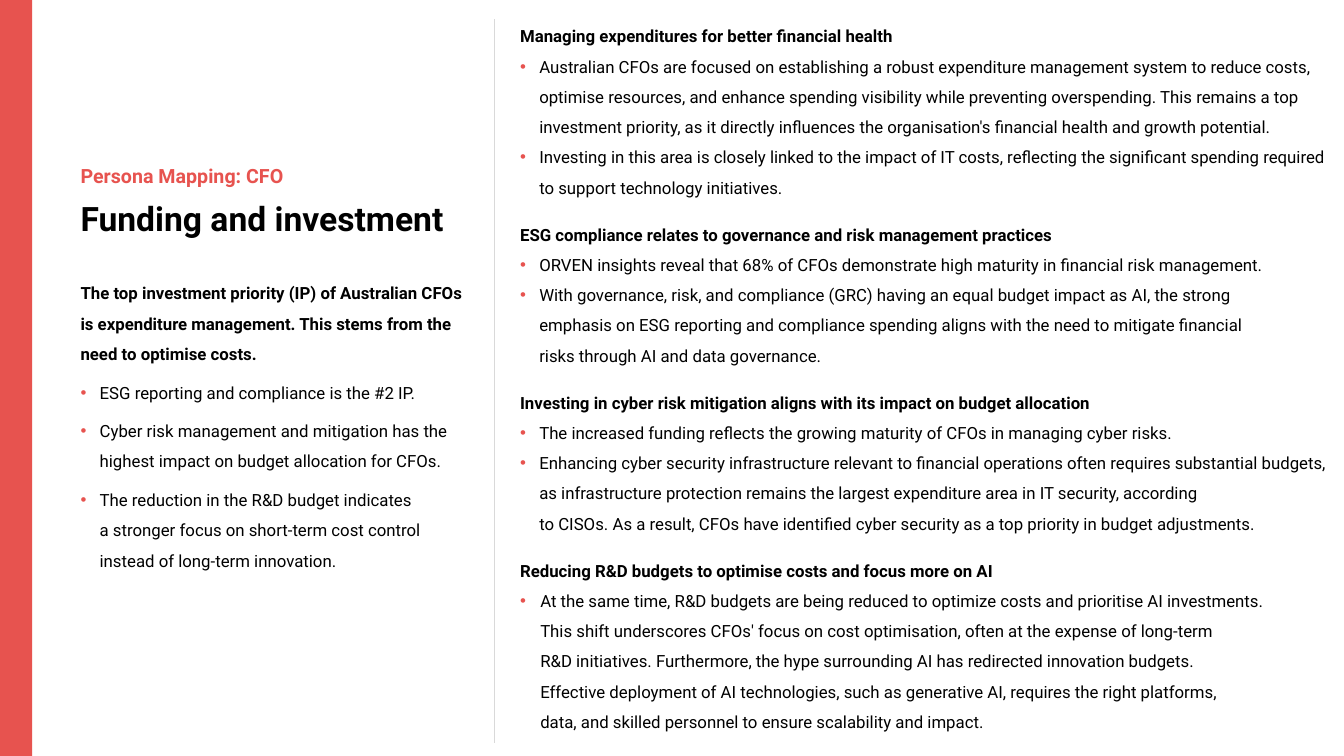
from lxml import etree
from pptx import Presentation, util as u
from pptx.dml.color import RGBColor
from pptx.enum import shapes, text
from pptx.oxml.ns import qn

RED, BLACK, GREY = "E7534F", "000000", "D9D9D9"


def px(n):
    """100 px to the inch."""
    return u.Emu(n * 9144)


def rgb(code):
    return RGBColor.from_string(code)


class Deck:
    font = "Roboto"

    def __init__(self, wide, high):
        self.prs = Presentation()
        self.prs.slide_width, self.prs.slide_height = px(wide), px(high)
        self.slide = self.prs.slides.add_slide(self.prs.slide_layouts[6])

    def bar(self, x, y, w, h, fill):
        box = self.slide.shapes.add_shape(
            shapes.MSO_SHAPE.RECTANGLE, px(x), px(y), px(w), px(h))
        box.shadow.inherit = False
        box.fill.solid()
        box.fill.fore_color.rgb = rgb(fill)
        box.line.fill.background()

    def line(self, x1, y1, x2, y2, hue, width):
        rule = self.slide.shapes.add_connector(
            shapes.MSO_CONNECTOR.STRAIGHT, px(x1), px(y1), px(x2), px(y2))
        rule.line.color.rgb = rgb(hue)
        rule.line.width = u.Pt(width)
        etree.SubElement(rule._element.spPr, qn("a:effectLst"))

    def frame(self, x, y, w, h):
        body = self.slide.shapes.add_textbox(px(x), px(y), px(w), px(h)).text_frame
        body.word_wrap = True
        body.auto_size = text.MSO_AUTO_SIZE.SHAPE_TO_FIT_TEXT
        return body

    def runs(self, para, words, size, hue, bold):
        for i, part in enumerate(words.split("\n")):
            if i:
                para.add_line_break()
            run = para.add_run()
            run.text = part
            run.font.name, run.font.size, run.font.bold = self.font, u.Pt(size), bold
            run.font.color.rgb = rgb(hue)

    def title(self, x, y, w, h, words, size, hue):
        body = self.frame(x, y, w, h)
        self.runs(body.paragraphs[0], words, size, hue, True)

    def bullet(self, para, indent):
        props = para._p.get_or_add_pPr()
        props.set("marL", str(px(indent)))
        props.set("indent", str(-px(indent)))
        tint = etree.SubElement(props, qn("a:buClr"))
        etree.SubElement(tint, qn("a:srgbClr")).set("val", RED)
        etree.SubElement(props, qn("a:buFont")).set("typeface", "Arial")
        etree.SubElement(props, qn("a:buChar")).set("char", "•")

    def topics(self, x, y, w, h, parts, gap, end):
        """Parts are (head, points, indent); gap follows a line, end a part."""
        body = self.frame(x, y, w, h)
        first = True
        for head, points, indent in parts:
            for i, words in enumerate([head] + points):
                para = body.paragraphs[0] if first else body.add_paragraph()
                first = False
                para.line_spacing = 1.5
                para.space_after = u.Pt(end if i == len(points) else gap)
                if i:
                    self.bullet(para, indent)
                self.runs(para, words, 12, BLACK, i == 0)


SUMMARY = [
    ("The top investment priority (IP) of Australian CFOs is expenditure management. "
     "This stems from the need to optimise costs.", [
         "ESG reporting and compliance is the #2 IP.",
         "Cyber risk management and mitigation has the highest impact on budget "
         "allocation for CFOs.",
         "The reduction in the R&D budget indicates\na stronger focus on short-term "
         "cost control instead of long-term innovation."], 19),
]

DETAIL = [
    ("Managing expenditures for better financial health", [
        "Australian CFOs are focused on establishing a robust expenditure management "
        "system to reduce costs, optimise resources, and enhance spending visibility "
        "while preventing overspending. This remains a top investment priority, as it "
        "directly influences the organisation's financial health and growth potential.",
        "Investing in this area is closely linked to the impact of IT costs, reflecting "
        "the significant spending required to support technology initiatives."], 19),
    ("ESG compliance relates to governance and risk management practices", [
        "ORVEN insights reveal that 68% of CFOs demonstrate high maturity in financial "
        "risk management.",
        "With governance, risk, and compliance (GRC) having an equal budget impact as "
        "AI, the strong\nemphasis on ESG reporting and compliance spending aligns with "
        "the need to mitigate financial\nrisks through AI and data governance."], 19),
    ("Investing in cyber risk mitigation aligns with its impact on budget allocation", [
        "The increased funding reflects the growing maturity of CFOs in managing cyber "
        "risks.",
        "Enhancing cyber security infrastructure relevant to financial operations often "
        "requires substantial budgets, as infrastructure protection remains the largest "
        "expenditure area in IT security, according\nto CISOs. As a result, CFOs have "
        "identified cyber security as a top priority in budget adjustments."], 19),
    ("Reducing R&D budgets to optimise costs and focus more on AI", [
        "At the same time, R&D budgets are being reduced to optimize costs and "
        "prioritise AI investments.\nThis shift underscores CFOs' focus on cost "
        "optimisation, often at the expense of long-term\nR&D initiatives. Furthermore, "
        "the hype surrounding AI has redirected innovation budgets.\nEffective "
        "deployment of AI technologies, such as generative AI, requires the right "
        "platforms,\ndata, and skilled personnel to ensure scalability and impact."], 20),
]


def main():
    deck = Deck(1333, 750)
    # Side band
    deck.bar(0, 0, 32, 750, RED)
    # Left column: summary and headings
    deck.topics(70, 266, 412, 304, SUMMARY, 6, 6)
    deck.title(70, 191, 412, 50, "Funding and investment", 24, BLACK)
    deck.title(70, 158, 452, 34, "Persona Mapping: CFO", 14, RED)
    # Divider
    deck.line(490, 737, 490, 19, GREY, 0.5)
    # Right column: four topics
    deck.topics(506, 11, 825, 724, DETAIL, 0, 12)
    deck.prs.save("out.pptx")


if __name__ == "__main__":
    main()
